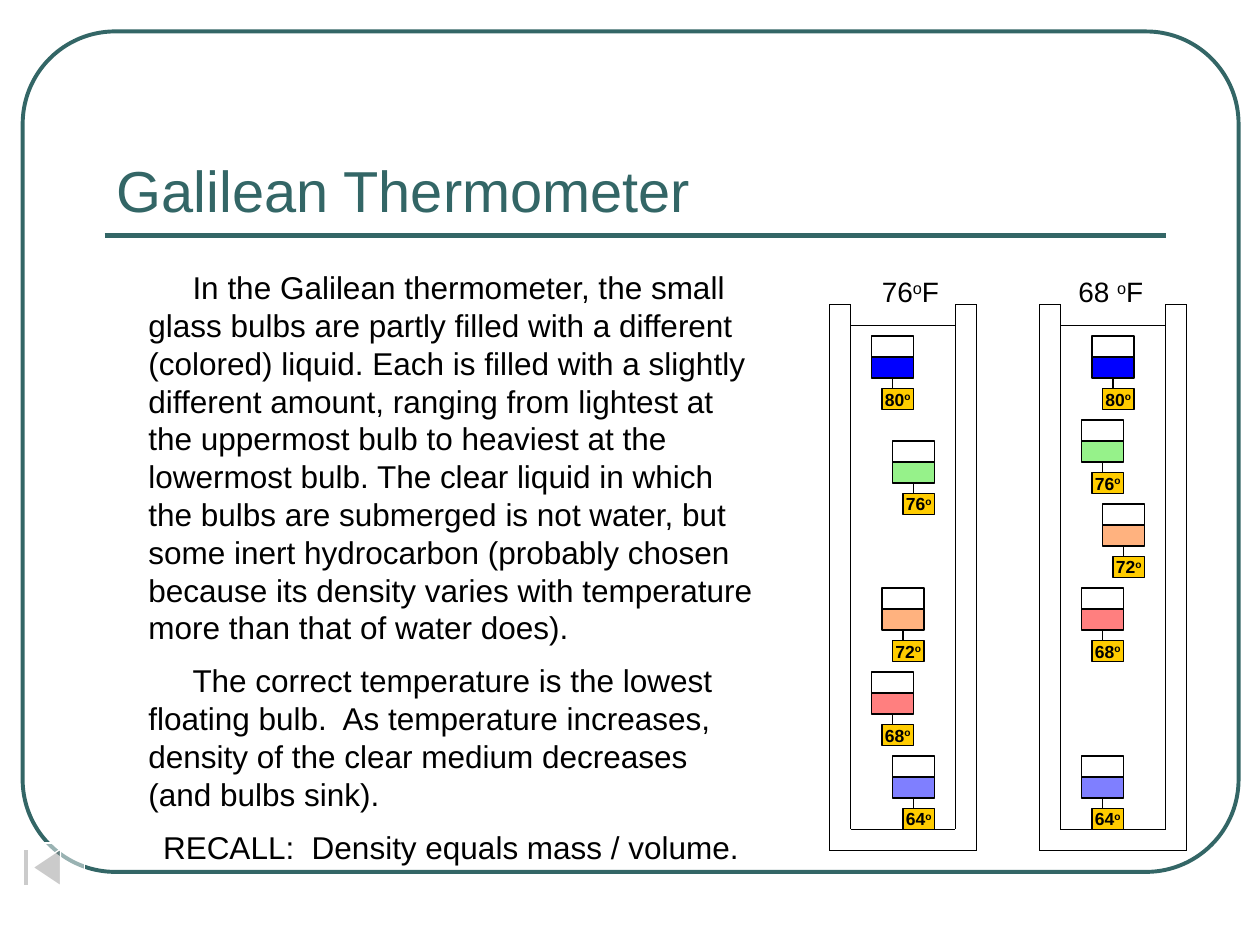
from lxml import etree
from pptx import Presentation
from pptx.dml.color import RGBColor
from pptx.enum.shapes import MSO_CONNECTOR, MSO_SHAPE
from pptx.enum.text import MSO_ANCHOR, PP_ALIGN
from pptx.oxml.ns import qn
from pptx.util import Inches, Pt

STRAIGHT = MSO_CONNECTOR.STRAIGHT
RECTANGLE = MSO_SHAPE.RECTANGLE
CENTER, LEFT = PP_ALIGN.CENTER, PP_ALIGN.LEFT
TEAL, BLACK, WHITE, TAG = "336666", "000000", "FFFFFF", "FFCC00"

# Content
TITLE = "Galilean Thermometer"
# text, first-line indent, alignment, space before
BODY = [
    ("In the Galilean thermometer, the small glass bulbs are partly filled with a "
     "different (colored) liquid. Each is filled with a slightly different amount, "
     "ranging from lightest at the uppermost bulb to heaviest at the lowermost bulb. "
     "The clear liquid in which the bulbs are submerged is not water, but some inert "
     "hydrocarbon (probably chosen because its density varies with temperature more "
     "than that of water does).", 0.35, LEFT, 0),
    ("The correct temperature is the lowest floating bulb.  As temperature increases, "
     "density of the clear medium decreases (and bulbs sink).", 0.35, LEFT, 8.6),
    ("RECALL:  Density equals mass / volume.", 0, CENTER, 8.6),
]
# bulb label: liquid colour, opacity in percent
BULBS = {
    "80": ("0000FF", 100),
    "76": ("96F28A", 100),
    "72": ("FF6600", 50),
    "68": ("FF0000", 50),
    "64": ("0000FF", 50),
}
# Tubes lie on a grid of 1/12 inch; bulb places are (offset from tube, top)
TUBES = [
    {"reading": "76", "label_left": 6.9, "left": 79,
     "bulbs": [(4, 32), (6, 42), (5, 56), (4, 64), (6, 72)]},
    {"reading": "68 ", "label_left": 8.46, "left": 99,
     "bulbs": [(5, 32), (4, 40), (6, 48), (4, 56), (4, 72)]},
]
TOP, LIQUID, INNER_BOTTOM, BOTTOM = 29, 31, 79, 81
# walls, floors, rims and liquid surface: x1, y1, x2, y2
TUBE_LINES = [
    (0, TOP, 0, BOTTOM), (14, TOP, 14, BOTTOM), (0, BOTTOM, 14, BOTTOM),
    (2, TOP, 2, INNER_BOTTOM), (12, TOP, 12, INNER_BOTTOM),
    (2, INNER_BOTTOM, 12, INNER_BOTTOM),
    (0, TOP, 2, TOP), (12, TOP, 14, TOP), (2, LIQUID, 12, LIQUID),
]


def color(value):
    return RGBColor.from_string(value)


def add_shape(slide, kind, box, fill=None, line=BLACK, width=0.75, opacity=100):
    shape = slide.shapes.add_shape(kind, *[Inches(v) for v in box])
    shape.shadow.inherit = False
    shape.line.color.rgb = color(line)
    shape.line.width = Pt(width)
    if fill is None:
        shape.fill.background()
        return shape
    shape.fill.solid()
    shape.fill.fore_color.rgb = color(fill)
    if opacity < 100:
        node = shape.fill._xPr.find(qn("a:solidFill"))[0]
        etree.SubElement(node, qn("a:alpha")).set("val", str(opacity * 1000))
    return shape


def add_line(slide, x1, y1, x2, y2, line=BLACK, width=0.75):
    connector = slide.shapes.add_connector(STRAIGHT, *[Inches(v) for v in (x1, y1, x2, y2)])
    connector.line.color.rgb = color(line)
    connector.line.width = Pt(width)
    etree.SubElement(connector._element.spPr, qn("a:effectLst"))
    return connector


def add_text_box(slide, box, wrap=True):
    text_frame = slide.shapes.add_textbox(*[Inches(v) for v in box]).text_frame
    text_frame.word_wrap = wrap
    return text_frame


def style(run, size, font_color=BLACK, bold=False, raised=False):
    run.font.name = "Arial"
    run.font.size = Pt(size)
    run.font.color.rgb = color(font_color)
    run.font.bold = bold
    if raised:
        run.font._element.set("baseline", "30000")


def add_degrees(paragraph, parts, size, bold=False):
    for part in parts:
        run = paragraph.add_run()
        run.text = part
        style(run, size, bold=bold, raised=part == "o")


def grid(*values):
    return [value / 12 for value in values]


def add_bulb(slide, x, y, label):
    liquid_color, opacity = BULBS[label]
    add_shape(slide, RECTANGLE, grid(x, y, 4, 2), WHITE)
    liquid = add_shape(slide, RECTANGLE, grid(x, y + 2, 4, 2), liquid_color, opacity=opacity)
    string = add_line(slide, *grid(x + 2, y + 4, x + 2, y + 5))
    string.begin_connect(liquid, 2)
    tag = add_shape(slide, RECTANGLE, grid(x + 1, y + 5, 3, 2), TAG)
    text_frame = tag.text_frame
    text_frame.word_wrap = False
    text_frame.vertical_anchor = MSO_ANCHOR.MIDDLE
    text_frame.margin_left = text_frame.margin_right = 0
    text_frame.margin_top = text_frame.margin_bottom = 0
    text_frame.paragraphs[0].alignment = CENTER
    add_degrees(text_frame.paragraphs[0], [label, "o"], 10, bold=True)


def main():
    presentation = Presentation()
    presentation.slide_width, presentation.slide_height = Inches(10), Inches(7.5)
    slide = presentation.slides.add_slide(presentation.slide_layouts[6])

    # Frame and title
    frame = add_shape(slide, MSO_SHAPE.ROUNDED_RECTANGLE, (0.18, 0.25, 9.65, 6.67),
                      line=TEAL, width=2.25)
    frame.adjustments[0] = 0.11
    add_line(slide, 0.83, 1.87, 9.25, 1.87, TEAL, 3)
    title = add_text_box(slide, (0.83, 0.58, 8.42, 1.25))
    title.vertical_anchor = MSO_ANCHOR.BOTTOM
    title.text = TITLE
    style(title.paragraphs[0].runs[0], 33, TEAL)

    # Explanation
    body = add_text_box(slide, (1.08, 2.08, 5, 4.91))
    body.text = "\n".join(text for text, *_ in BODY)
    for paragraph, (_, indent, alignment, before) in zip(body.paragraphs, BODY):
        paragraph.alignment = alignment
        paragraph.space_before = Pt(before)
        paragraph.line_spacing = Pt(21.6)
        paragraph._p.get_or_add_pPr().set("indent", str(Inches(indent)))
        style(paragraph.runs[0], 18)

    # Thermometers
    for tube in TUBES:
        left = tube["left"]
        for x1, y1, x2, y2 in TUBE_LINES:
            add_line(slide, *grid(left + x1, y1, left + x2, y2))
        for label, (x, y) in zip(BULBS, tube["bulbs"]):
            add_bulb(slide, left + x, y, label)
        reading = add_text_box(slide, (tube["label_left"], 2.13, 0.75, 0.37), wrap=False)
        add_degrees(reading.paragraphs[0], [tube["reading"], "o", "F"], 16)

    # Back button
    add_shape(slide, MSO_SHAPE.ACTION_BUTTON_BEGINNING, (0, 6.69, 0.67, 0.39),
              WHITE, line=WHITE, opacity=50)

    presentation.save("out.pptx")


if __name__ == "__main__":
    main()
